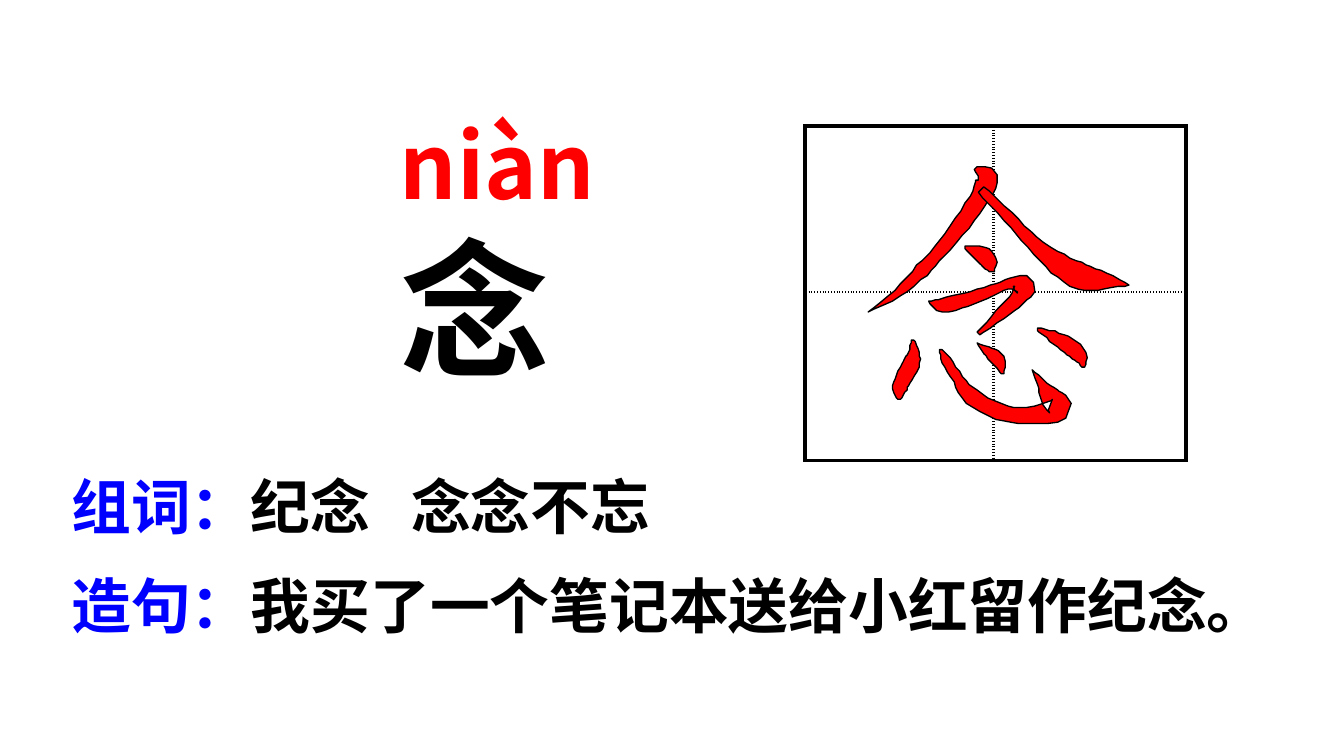
from math import hypot

from lxml.etree import SubElement
from pptx import Presentation
from pptx.dml.color import RGBColor
from pptx.enum.text import MSO_ANCHOR as Anchor, MSO_AUTO_SIZE as AutoSize, PP_ALIGN as Align
from pptx.oxml.ns import qn
from pptx.util import Cm, Pt

RED, BLUE, BLACK = "FF0000", "0000FF", "000000"
BRUSH_UNIT = Cm(0.0254)
STEPS = 4

BRUSH_SPINES = {
    "left falling": [(126, 25, 1), (134, 32, 8), (130, 45, 7), (116, 66, 6),
                     (99, 87, 5), (86, 101, 5), (68, 118, 3), (46, 132, 0)],
    "right falling": [(130, 41, 3), (150, 61, 4), (168, 80, 5), (187, 96, 8),
                      (205, 106, 10), (222, 109, 6), (240, 112, 0)],
    "upper dot": [(118, 84, 1), (130, 89, 6), (136, 95, 6), (138, 102, 2)],
    "folded stroke": [(91, 124, 0), (101, 127, 5), (119, 123, 5), (138, 116, 4),
                      (152, 111, 4), (162, 113, 8), (157, 122, 6), (144, 134, 4),
                      (128, 148, 1)],
    "heart left dot": [(79, 153, 1), (80, 162, 4), (78, 171, 6), (72, 182, 6),
                       (69, 190, 5), (69, 197, 1)],
    "heart hook": [(100, 160, 1), (104, 168, 3), (113, 182, 4), (123, 195, 6),
                   (143, 206, 6), (164, 209, 6), (188, 204, 9), (182, 196, 8),
                   (176, 187, 4), (168, 175, 0)],
    "heart middle dot": [(127, 155, 0), (136, 162, 4), (143, 168, 5), (146, 178, 1)],
    "heart right dot": [(172, 145, 1), (183, 150, 4), (195, 157, 6), (204, 165, 5),
                        (206, 173, 1)],
}


def color(value):
    return RGBColor.from_string(value)


def add_run(p, text, size=32, fill=BLACK, font="Noto Sans CJK SC"):
    r = p.add_run()
    r.text = text
    r.font.size = Pt(size)
    r.font.bold = True
    r.font.name = font
    r.font.color.rgb = color(fill)
    SubElement(r.font._element, qn("a:ea"), typeface=font)


def catmull_rom(a, b, c, d, t):
    return (2 * b + (c - a) * t + (2 * a - 5 * b + 4 * c - d) * t ** 2
            + (3 * b - a - 3 * c + d) * t ** 3) / 2


def smooth(spine):
    padded = [spine[0], *spine, spine[-1]]
    curve = []
    for knots in zip(padded, padded[1:], padded[2:], padded[3:]):
        for step in range(STEPS):
            curve.append([catmull_rom(*values, step / STEPS) for values in zip(*knots)])
    return curve + [spine[-1]]


def brush_outline(spine):
    curve = smooth(spine)
    one_side, other_side = [], []
    for i, (x, y, half_width) in enumerate(curve):
        before, after = curve[max(i - 1, 0)], curve[min(i + 1, len(curve) - 1)]
        dx, dy = after[0] - before[0], after[1] - before[1]
        reach = max(half_width, 0) / hypot(dx, dy)
        one_side.append((x - dy * reach, y + dx * reach))
        other_side.append((x + dy * reach, y - dx * reach))
    return one_side + other_side[::-1]


class CharacterCard:
    def __init__(self):
        self.prs = Presentation()
        self.prs.slide_width, self.prs.slide_height = Cm(25.4), Cm(14.28)
        self.s = self.prs.slides.add_slide(self.prs.slide_layouts[5])

    def frame(self, sp, x, y, w, h, wrap=True):
        sp.left, sp.top, sp.width, sp.height = Cm(x), Cm(y), Cm(w), Cm(h)
        tf = sp.text_frame
        tf.word_wrap = wrap
        tf.auto_size = AutoSize.NONE
        tf.vertical_anchor = Anchor.MIDDLE
        p = tf.paragraphs[0]
        p.alignment = Align.LEFT
        return p

    def title(self, text, x, y, w, h, **style):
        p = self.frame(self.s.shapes.title, x, y, w, h, wrap=False)
        add_run(p, text, **style)

    def text(self, text, x, y, w, h, label="", tab=None, **style):
        sp = self.s.shapes.add_textbox(0, 0, 0, 0)
        p = self.frame(sp, x, y, w, h)
        if tab:
            tabs = SubElement(p._p.get_or_add_pPr(), qn("a:tabLst"))
            SubElement(tabs, qn("a:tab"), pos=str(Cm(tab)), algn="l")
        if label:
            add_run(p, label, fill=BLUE)
        add_run(p, text, **style)

    def border(self, cell, side, outer):
        width = Pt(2.25 if outer else 1.5)
        ln = SubElement(cell._tc.get_or_add_tcPr(), qn("a:ln" + side), w=str(width))
        fill = SubElement(ln, qn("a:solidFill"))
        SubElement(fill, qn("a:srgbClr"), val=BLACK)
        SubElement(ln, qn("a:prstDash"), val="solid" if outer else "sysDot")

    def writing_grid(self, x, y, widths, heights):
        table = self.s.shapes.add_table(
            len(heights), len(widths), Cm(x), Cm(y), Cm(sum(widths)), Cm(sum(heights))
        ).table
        table.first_row = table.horz_banding = False
        for column, w in zip(table.columns, widths):
            column.width = Cm(w)
        for i, h in enumerate(heights):
            table.rows[i].height = Cm(h)
            for j in range(len(widths)):
                cell = table.cell(i, j)
                outer = {"L": j == 0, "R": j == len(widths) - 1,
                         "T": i == 0, "B": i == len(heights) - 1}
                for side, is_outer in outer.items():
                    self.border(cell, side, is_outer)
                cell.fill.background()

    def brush_stroke(self, spine, x, y):
        start, *rest = brush_outline(spine)
        builder = self.s.shapes.build_freeform(*start, scale=BRUSH_UNIT)
        builder.add_line_segments(rest, close=True)
        sp = builder.convert_to_shape(Cm(x), Cm(y))
        sp.shadow.inherit = False
        sp.fill.solid()
        sp.fill.fore_color.rgb = color(RED)
        sp.line.color.rgb = color(BLACK)
        sp.line.width = Pt(0.7)


def main():
    card = CharacterCard()
    card.writing_grid(15.21, 2.38, widths=[3.57, 3.63], heights=[3.14, 3.18])
    card.title("念", 7.31, 3.96, 3.38, 3.68, size=80)
    card.text("niàn", 7.31, 1.94, 6.2, 2.31, size=48, fill=RED)
    card.text("纪念\t念念不忘", 1.1, 8.74, 19.89, 1.63, label="组词：", tab=6.42)
    card.text("我买了一个笔记本送给小红留作纪念。", 1.1, 10.6, 23.67, 1.63, label="造句：")
    for spine in BRUSH_SPINES.values():
        card.brush_stroke(spine, 15.24, 2.54)
    card.prs.save("out.pptx")


if __name__ == "__main__":
    main()
